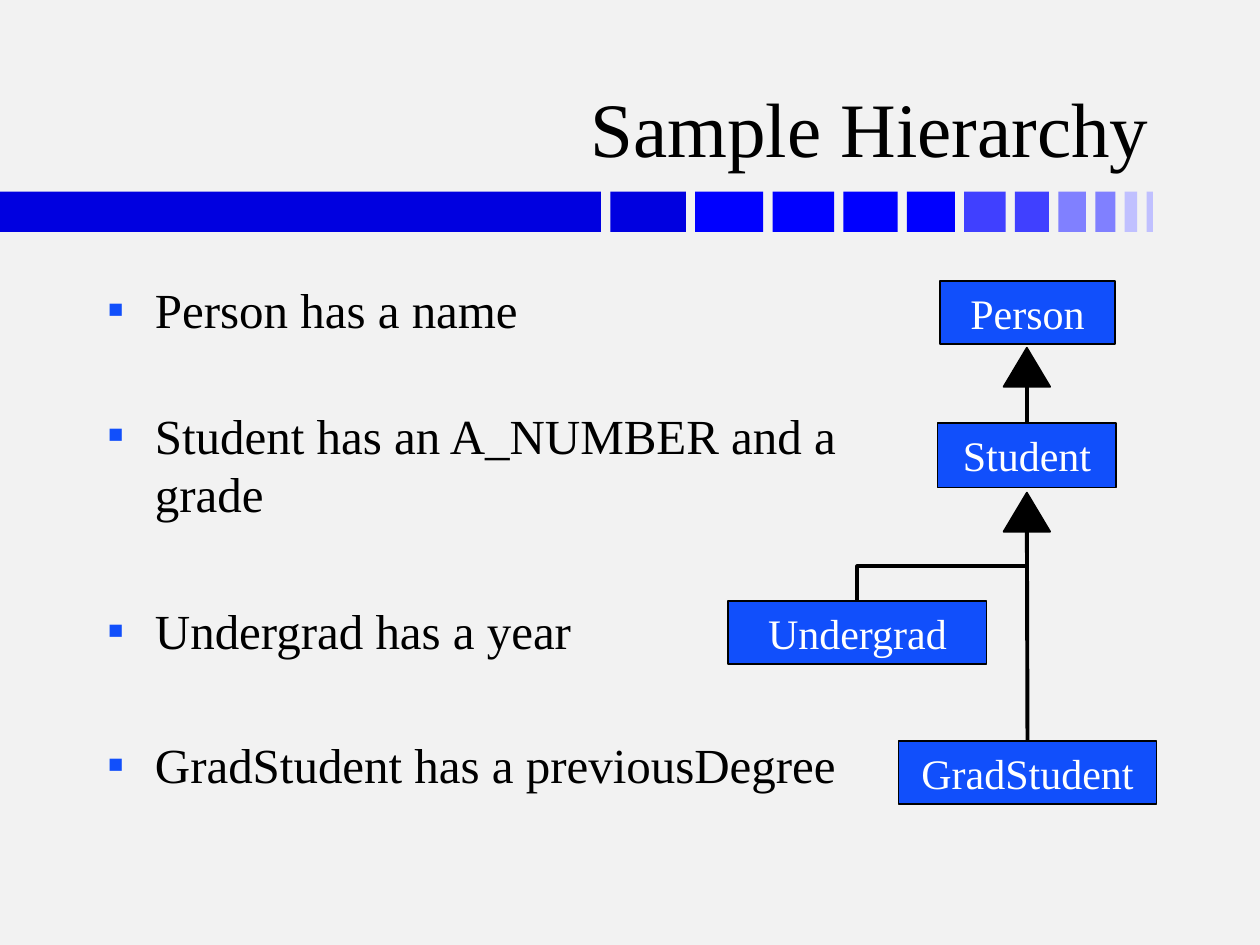
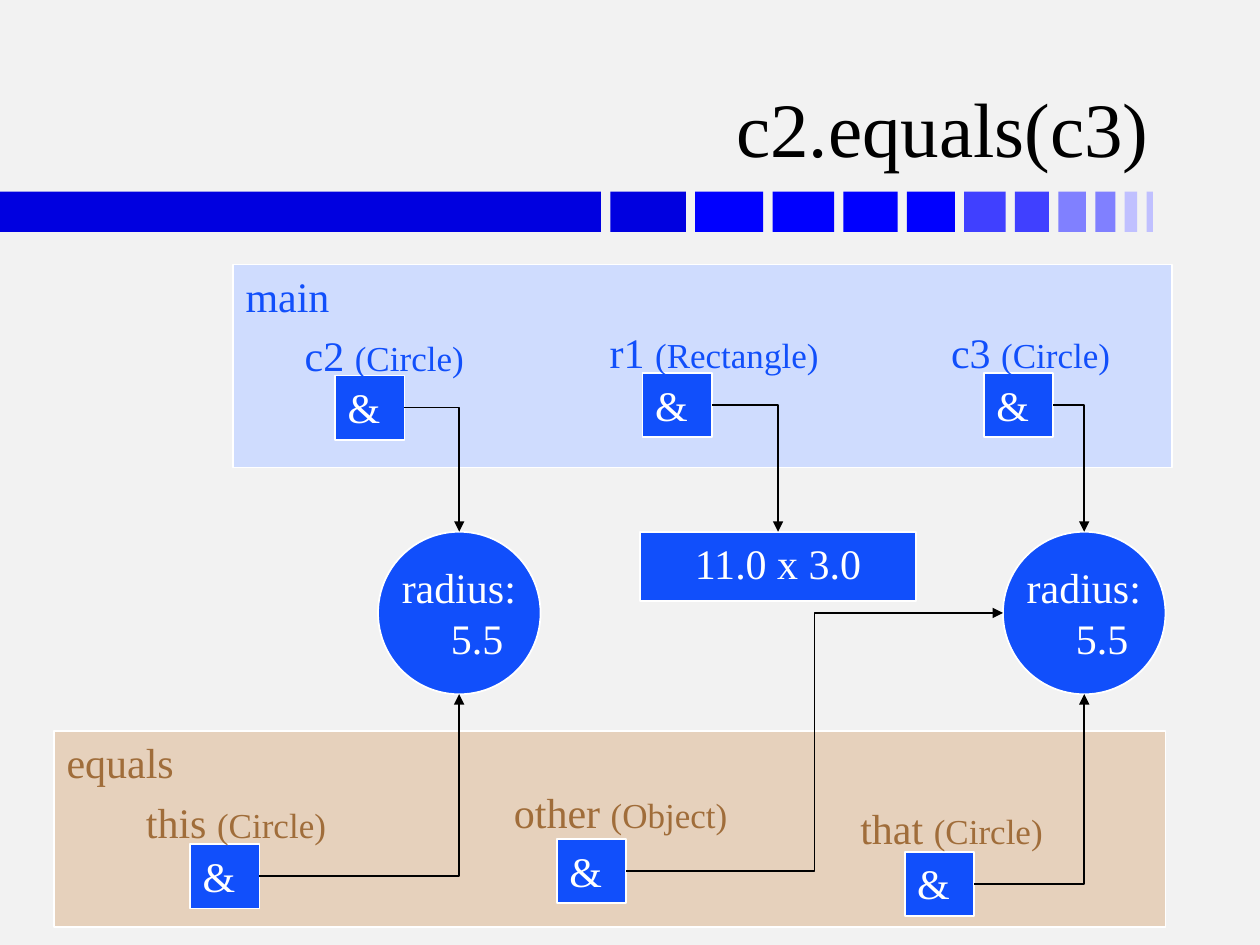
from lxml.etree import SubElement
from pptx import Presentation
from pptx.dml.color import RGBColor
from pptx.enum.shapes import MSO_CONNECTOR, MSO_SHAPE
from pptx.enum.text import MSO_ANCHOR, MSO_AUTO_SIZE, PP_ALIGN
from pptx.oxml.ns import qn
from pptx.util import Inches, Pt

FONT = "Times New Roman"
COLORS = {
    "bg": "F2F2F2", "ink": "000000", "white": "FFFFFF", "blue": "114FFB",
    "main": "CFDCFE", "equals": "E6D1BC", "brown": "A06D3A",
    "band1": "0000E0", "band2": "0000FF", "band3": "4040FF",
    "band4": "8080FF", "band5": "C0C0FF",
}

BAND_TOP, BAND_HEIGHT, BAND_RIGHT = 1.52, 0.32, 9.15
BAND = [
    (4.77, "band1"), (0.6, "band1"), (0.54, "band2"), (0.49, "band2"),
    (0.43, "band2"), (0.38, "band2"), (0.33, "band3"), (0.27, "band3"),
    (0.22, "band4"), (0.16, "band4"), (0.1, "band5"), (0.05, "band5"),
]
TITLE_BOX = (0.74, 0.19, 8.48, 1.23)
BODY_BOX = (0.75, 2.17, 8.5, 4.5)

FACTS = [
    ("Person has a name", 3),
    ("Student has an A_NUMBER and a\ngrade", 38),
    ("Undergrad has a year", 44.5),
    ("GradStudent has a previousDegree", 43),
]
CLASSES = {
    "Person": (7.46, 2.23, 1.39, 0.5),
    "Student": (7.44, 3.36, 1.42, 0.51),
    "Undergrad": (5.78, 4.77, 2.05, 0.5),
    "GradStudent": (7.13, 5.88, 2.05, 0.5),
}
TRUNK_X = 8.15
HEAD_WIDTH, HEAD_HEIGHT = 0.37, 0.31
HEAD_TOPS = {"Student": 2.76, "GradStudent": 3.91}

PANELS = [
    ("equals", (0.43, 5.8, 8.82, 1.56), "brown"),
    ("main", (1.85, 2.1, 7.45, 1.61), "blue"),
]
OBJECTS = {
    "circle1": (3, 4.22, 1.29, 1.29),
    "circle2": (7.96, 4.22, 1.29, 1.29),
    "rectangle": (5.08, 4.22, 2.19, 0.55),
}
REF_SIZE = (0.55, 0.51)
REFERENCES = [
    ("c2", "Circle", "blue", (2.32, 2.57, 1.47), (2.66, 2.98), "circle1", "top"),
    ("r1", "Rectangle", "blue", (4.74, 2.54, 1.87), (5.1, 2.96), "rectangle", "top"),
    ("c3", "Circle", "blue", (7.45, 2.54, 1.47), (7.81, 2.96), "circle2", "top"),
    ("this", "Circle", "brown", (1.06, 6.27, 1.64), (1.51, 6.7), "circle1", "bottom"),
    ("other", "Object", "brown", (3.98, 6.19, 1.91), (4.42, 6.66), "circle2", "left"),
    ("that", "Circle", "brown", (6.73, 6.32, 1.66), (7.18, 6.76), "circle2", "bottom"),
]


def rgb(name):
    return RGBColor.from_string(COLORS[name])


def inches(values):
    return [Inches(v) for v in values]


def write(p, *runs, color="ink", size=24, align=PP_ALIGN.LEFT, before=0, indent=0):
    p.alignment = align
    p.space_before = Pt(before)
    if indent:
        pPr = p._p.get_or_add_pPr()
        pPr.set("marL", str(Inches(indent)))
        pPr.set("indent", str(-Inches(indent)))
    for text, run_size in runs:
        for i, line in enumerate(text.split("\n")):
            if i:
                p.add_line_break()
            r = p.add_run()
            r.text = line
            r.font.name = FONT
            r.font.size = Pt(run_size or size)
            r.font.color.rgb = rgb(color)


def add_bullet(p):
    pPr = p._p.get_or_add_pPr()
    color = SubElement(pPr, qn("a:buClr"))
    SubElement(color, qn("a:srgbClr")).set("val", COLORS["blue"])
    SubElement(pPr, qn("a:buFont")).set("typeface", FONT)
    SubElement(pPr, qn("a:buChar")).set("char", "▪")


def add_box(s, box, fill, line=None, text=None, kind=MSO_SHAPE.RECTANGLE, inset=0.1, **fmt):
    sp = s.shapes.add_shape(kind, *inches(box))
    sp.shadow.inherit = False
    sp.fill.solid()
    sp.fill.fore_color.rgb = rgb(fill)
    if line:
        sp.line.color.rgb = rgb(line)
        sp.line.width = Pt(1)
    else:
        sp.line.fill.background()
    if text:
        tf = sp.text_frame
        tf.word_wrap = True
        tf.vertical_anchor = MSO_ANCHOR.TOP
        tf.margin_left = tf.margin_right = Inches(inset)
        write(tf.paragraphs[0], (text, None), **fmt)
    return sp


def add_line(s, start, end, kind=MSO_CONNECTOR.ELBOW, width=1, arrow=False):
    cn = s.shapes.add_connector(kind, *inches(start + end))
    cn.line.color.rgb = rgb("ink")
    cn.line.width = Pt(width)
    if arrow:
        SubElement(cn.line._get_or_add_ln(), qn("a:tailEnd")).set("type", "triangle")
    SubElement(cn._element.spPr, qn("a:effectLst"))
    return cn


def add_rising_elbow(s, start, end, width):
    (x1, y1), (x2, y2) = start, end
    cx, cy = (x1 + x2) / 2, (y1 + y2) / 2
    dx, dy = (x2 - x1) / 2, (y1 - y2) / 2
    cn = add_line(s, (cx + dy, cy + dx), (cx - dy, cy - dx), width=width)
    cn._element.spPr.find(qn("a:xfrm")).set("rot", "5400000")


def place(sp, box):
    sp.left, sp.top, sp.width, sp.height = inches(box)


def set_up_master(prs, s):
    master = prs.slide_master
    master.background.fill.solid()
    master.background.fill.fore_color.rgb = rgb("bg")
    gap = (BAND_RIGHT - sum(w for w, _ in BAND)) / (len(BAND) - 1)
    left = 0
    for i, (width, color) in enumerate(BAND):
        sp = add_box(s, (left, BAND_TOP, width, BAND_HEIGHT), color)
        sp._element.nvSpPr.cNvPr.set("id", str(100 + i))
        master.shapes._spTree.insert(2 + i, sp._element)
        left += width + gap


def add_slide(prs, layout, title):
    s = prs.slides.add_slide(prs.slide_layouts[layout])
    sp = s.shapes.title
    place(sp, TITLE_BOX)
    tf = sp.text_frame
    tf.auto_size = MSO_AUTO_SIZE.NONE
    tf.vertical_anchor = MSO_ANCHOR.BOTTOM
    write(tf.paragraphs[0], (title, 44), align=PP_ALIGN.RIGHT)
    return s


def build_hierarchy(s):
    body = s.placeholders[1]
    place(body, BODY_BOX)
    tf = body.text_frame
    tf.auto_size = MSO_AUTO_SIZE.NONE
    for i, (fact, before) in enumerate(FACTS):
        p = tf.add_paragraph() if i else tf.paragraphs[0]
        write(p, (fact, 28), before=before, indent=0.38)
        add_bullet(p)
    boxes = {
        name: add_box(s, box, "blue", "ink", name, color="white", align=PP_ALIGN.CENTER)
        for name, box in CLASSES.items()
    }
    for name, top in HEAD_TOPS.items():
        base = (TRUNK_X, top + HEAD_HEIGHT)
        cn = add_line(s, (TRUNK_X, CLASSES[name][1]), base, MSO_CONNECTOR.STRAIGHT, 2.25)
        cn.begin_connect(boxes[name], 0)
        add_box(s, (TRUNK_X - HEAD_WIDTH / 2, top, HEAD_WIDTH, HEAD_HEIGHT),
                "ink", "ink", kind=MSO_SHAPE.ISOSCELES_TRIANGLE)
    x, y, w, _ = CLASSES["Undergrad"]
    add_rising_elbow(s, (x + w / 2, y), base, 2.25)


def side_point(box, side):
    x, y, w, h = box
    return {"top": (x + w / 2, y), "bottom": (x + w / 2, y + h), "left": (x, y + h / 2)}[side]


def build_memory(s):
    for name, box, color in PANELS:
        sp = add_box(s, box, name, "white", name, color=color)
        s.shapes._spTree.insert(2, sp._element)
    for name, box in OBJECTS.items():
        if name == "rectangle":
            add_box(s, box, "blue", "white", "11.0 x 3.0", color="white", align=PP_ALIGN.CENTER)
        else:
            add_box(s, box, "blue", "white", "radius: 5.5", MSO_SHAPE.OVAL,
                    inset=0, color="white", indent=0.39)
    for name, type_name, color, label, (x, y), target, side in REFERENCES:
        add_box(s, (x, y, *REF_SIZE), "blue", "white", "&", color="white")
        tf = s.shapes.add_textbox(*inches((*label, 0.5))).text_frame
        tf.word_wrap = False
        write(tf.paragraphs[0], (name + " ", 24), (f"({type_name})", 20), color=color)
        start = (x + REF_SIZE[0], y + REF_SIZE[1] / 2)
        cn = add_line(s, start, side_point(OBJECTS[target], side), arrow=True)
        if side != "left":
            cn._element.spPr.find(qn("a:prstGeom")).set("prst", "bentConnector2")


def main():
    prs = Presentation()
    prs.slide_width, prs.slide_height = Inches(10), Inches(7.5)
    hierarchy = add_slide(prs, 1, "Sample Hierarchy")
    set_up_master(prs, hierarchy)
    build_hierarchy(hierarchy)
    build_memory(add_slide(prs, 5, "c2.equals(c3)"))
    prs.save("out.pptx")


if __name__ == "__main__":
    main()
